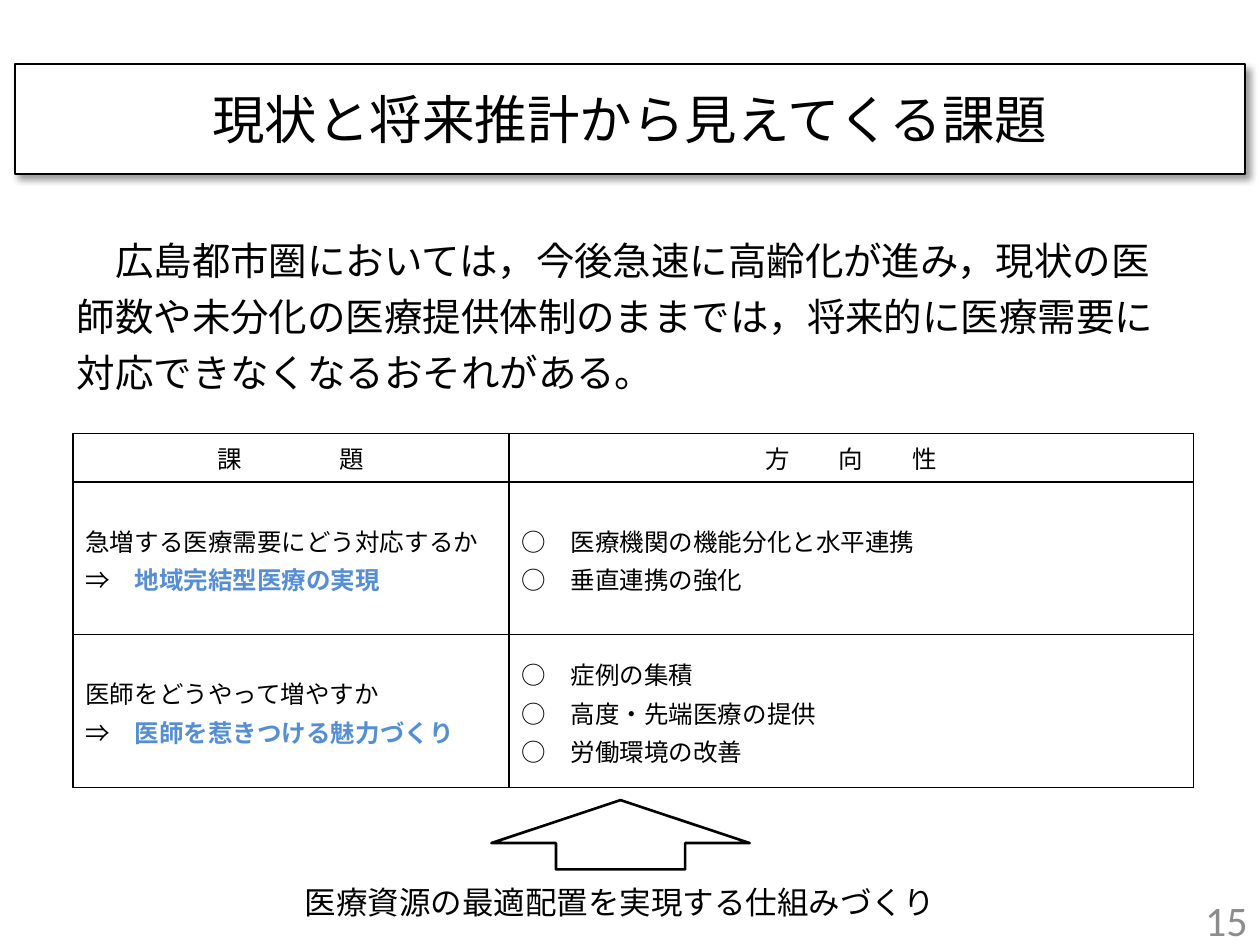
from dataclasses import dataclass
from pptx import Presentation
from pptx.dml.color import RGBColor as Color
from pptx.enum.lang import MSO_LANGUAGE_ID as Language
from pptx.enum.shapes import MSO_SHAPE as Shape
from pptx.enum.text import MSO_ANCHOR as Anchor, MSO_AUTO_SIZE as AutoSize, PP_ALIGN as Align
from pptx.oxml import parse_xml
from pptx.oxml.ns import nsdecls
from pptx.util import Pt


@dataclass(frozen=True)
class Theme:
    black: str = "000000"
    white: str = "FFFFFF"
    blue: str = "558ED5"
    gray: str = "8C8C8C"
    latin: str = "Arial"
    heading: str = "Calibri"
    japanese: str = "Noto Sans CJK JP"
    title: int = 30
    number: int = 24
    lead: int = 22
    caption: int = 18
    body: int = 14


THEME = Theme()


def points(*lengths):
    return [Pt(length) for length in lengths]


def add_span(para, text, size, font=THEME.latin, color=THEME.black, bold=False):
    span = para.add_run()
    span.text = text
    span.font.name = font
    span.font.size = Pt(size)
    span.font.bold = bold
    span.font.color.rgb = Color.from_string(color)
    span.font.language_id = Language.JAPANESE
    span.font._element.find("{*}latin").addnext(
        parse_xml(f'<a:ea {nsdecls("a")} typeface="{THEME.japanese}"/>'))


def write(frame, lines, align=Align.LEFT, anchor=Anchor.MIDDLE, spacing=None, **style):
    frame.word_wrap = True
    frame.vertical_anchor = anchor
    for index, line in enumerate(lines):
        para = frame.paragraphs[0] if index == 0 else frame.add_paragraph()
        para.alignment = align
        if spacing:
            para.line_spacing = Pt(spacing)
        for text, changes in [(line, {})] if isinstance(line, str) else line:
            add_span(para, text, **{**style, **changes})


def format_title(page, text):
    title = page.shapes.title
    title.left, title.top, title.width, title.height = points(8.6, 36.7, 702.7, 62.6)
    title.fill.solid()
    title.fill.fore_color.rgb = Color.from_string(THEME.white)
    title.line.color.rgb = Color.from_string(THEME.black)
    title.line.width = Pt(1)
    title._element.spPr.append(parse_xml(
        f'<a:effectLst {nsdecls("a")}><a:outerShdw blurRad="{Pt(4)}" dist="{Pt(3)}" '
        f'dir="2700000" algn="tl" rotWithShape="0"><a:srgbClr val="{THEME.black}">'
        '<a:alpha val="40000"/></a:srgbClr></a:outerShdw></a:effectLst>'))
    title.text_frame.auto_size = AutoSize.NONE
    write(title.text_frame, [text], align=Align.CENTER, size=THEME.title, font=THEME.heading)


def add_text(page, bounds, text, **style):
    box = page.shapes.add_textbox(*points(*bounds))
    write(box.text_frame, [text], **style)


def add_border(cell):
    properties = cell._tc.get_or_add_tcPr()
    for index, side in enumerate("LRTB"):
        properties.insert(index, parse_xml(
            f'<a:ln{side} {nsdecls("a")} w="{Pt(1)}"><a:solidFill>'
            f'<a:srgbClr val="{THEME.black}"/></a:solidFill></a:ln{side}>'))


def add_grid(page, left, top, widths, heights):
    bounds = points(left, top, sum(widths), sum(heights))
    table = page.shapes.add_table(len(heights), len(widths), *bounds).table
    table.first_row = table.horz_banding = False
    for column, width in zip(table.columns, widths):
        column.width = Pt(width)
    for row, height in zip(table.rows, heights):
        row.height = Pt(height)
    for cell in table.iter_cells():
        cell.fill.background()
    return table


def add_lead(page, text):
    cell = add_grid(page, 36.7, 128.2, [646.6], [113]).cell(0, 0)
    write(cell.text_frame, [text], spacing=32, size=THEME.lead)
    cell.vertical_anchor = Anchor.TOP


def add_issues(page, headings, issues):
    table = add_grid(page, 41.6, 247.7, [249.3, 391.2], [27.5, 87.3, 87.3])
    for column, heading in enumerate(headings):
        write(table.cell(0, column).text_frame, [heading], align=Align.CENTER, size=THEME.body)
    for row, (question, goal, directions) in enumerate(issues, 1):
        answer = [("⇒　", {"font": THEME.japanese}), (goal, {"color": THEME.blue, "bold": True})]
        contents = [question, answer], [f"○　{direction}" for direction in directions]
        for column, lines in enumerate(contents):
            write(table.cell(row, column).text_frame, lines, spacing=22, size=THEME.body)
    for cell in table.iter_cells():
        cell.vertical_anchor = Anchor.MIDDLE
        add_border(cell)


def add_arrow(page):
    arrow = page.shapes.add_shape(Shape.UP_ARROW, *points(280.8, 457.2, 147.6, 39.6))
    arrow.adjustments[0], arrow.adjustments[1] = 0.5, 0.62
    arrow.shadow.inherit = False
    arrow.fill.background()
    arrow.line.color.rgb = Color.from_string(THEME.black)
    arrow.line.width = Pt(1.5)


def main():
    deck = Presentation()
    deck.slide_width, deck.slide_height = points(720, 540)
    page = deck.slides.add_slide(deck.slide_layouts.get_by_name("Title Only"))
    format_title(page, "現状と将来推計から見えてくる課題")
    add_lead(page, "　広島都市圏においては，今後急速に高齢化が進み，現状の医師数や未分化の"
                   "医療提供体制のままでは，将来的に医療需要に対応できなくなるおそれがある。")
    add_issues(page, ["課　　　　題", "方　　向　　性"], [
        ("急増する医療需要にどう対応するか", "地域完結型医療の実現",
         ["医療機関の機能分化と水平連携", "垂直連携の強化"]),
        ("医師をどうやって増やすか", "医師を惹きつける魅力づくり",
         ["症例の集積", "高度・先端医療の提供", "労働環境の改善"]),
    ])
    add_arrow(page)
    add_text(page, (33.8, 496.8, 640.8, 37.4), "医療資源の最適配置を実現する仕組みづくり",
             align=Align.CENTER, size=THEME.caption)
    add_text(page, (552.2, 511.2, 167.8, 28.8), "15", align=Align.RIGHT,
             size=THEME.number, font=THEME.heading, color=THEME.gray)
    deck.save("out.pptx")


if __name__ == "__main__":
    main()
